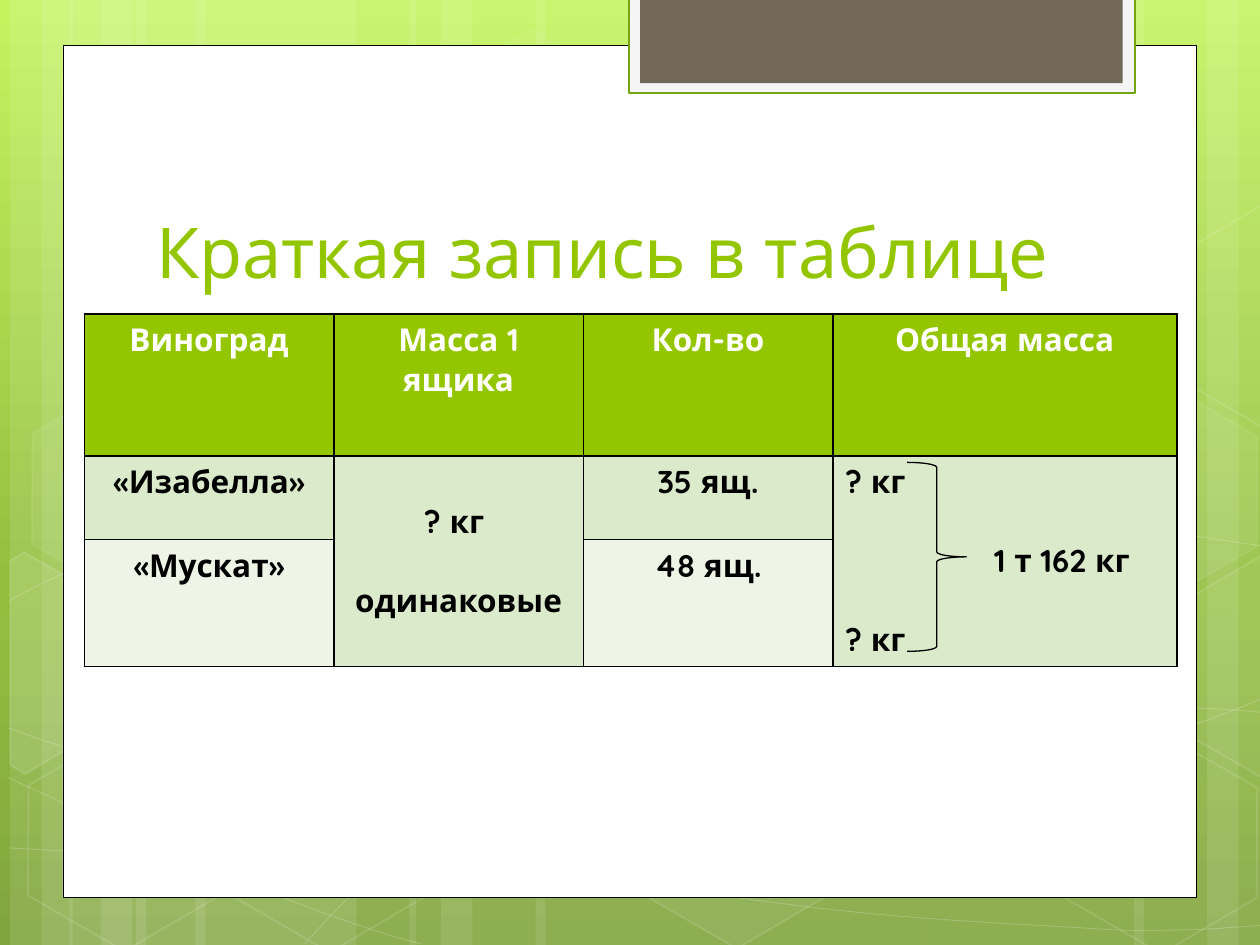
import copy
import math

import pptx
import pptx.dml.color
import pptx.enum.shapes
import pptx.enum.text
import pptx.oxml
import pptx.oxml.ns
import pptx.util

Inches, Pt = pptx.util.Inches, pptx.util.Pt
SHAPE = pptx.enum.shapes.MSO_SHAPE
ALIGN = pptx.enum.text.PP_ALIGN
qn = pptx.oxml.ns.qn

WIDTH, HEIGHT = 10, 7.5
FONT = "Quicksand"
LINE_PITCH = 22.5  # points between two lines of 18 pt text
TILT = 30  # degrees, all hexagons
COLORS = {"white": "FFFFFF", "black": "000000", "green": "94C600", "odd": "DCEACC", "even": "EEF5E7",
          "tab": "F5F5F5", "tab edge": "74A510", "tab core": "71685A"}

# Content
TITLE = "Краткая запись в таблице"
HEADINGS = ["Виноград", "Масса 1 ящика", "Кол-во", "Общая масса"]
GRAPES = [("«Изабелла»", "35 ящ."), ("«Мускат»", "48 ящ.")]
# Merged cells: text, empty lines above, left indent in inches
BOX_MASS = [("? кг ", 1, 0), ("одинаковые", 1, 0)]
TOTAL_MASS = [("? кг", 0, 0), ("1 т 162 кг", 1, 1.18), ("? кг", 1, 0)]

# Backdrop: gradient stops, bars (left, width, turn), curves (start, then cubic or straight segments)
BACKDROP = [(0, "C3F35F"), (0.62, "93BF3F"), (1, "81A53E")]
BARS = [(1.08, 1.75, 0), (0.08, 0.5, 0), (0.33, 0.83, 0), (1.55, 1.75, 0), (0.55, 0.5, 0), (0.8, 0.83, 0),
        (7.33, 1.75, 180), (9.58, 0.5, 180), (9, 0.83, 180), (4.25, 3.08, 0), (3.25, 0.5, 0), (3.5, 0.83, 0)]
CURVES = [
    ((0.07, 6.73), [(0.61, 6.76, 1.15, 6.79, 1.9, 6.78), (2.65, 6.77, 3.58, 6.75, 4.58, 6.65),
                    (5.58, 6.55, 7, 6.36, 7.92, 6.17), (8.83, 5.98, 9.77, 5.68, 10.07, 5.51)]),
    ((0.07, 4.77), [(0.36, 4.61, 0.65, 4.46, 1.21, 4.31), (1.78, 4.16, 2.59, 3.94, 3.47, 3.87),
                    (4.36, 3.8, 5.44, 3.79, 6.54, 3.87), (7.64, 3.95, 9.47, 4.26, 10.07, 4.34)]),
    ((0.06, 6.17), [(1.27, 6.72, 2.47, 7.27, 3.34, 7.49)]),
    ((0.07, 5.78), [(0.38, 5.89, 0.7, 6, 1.28, 6.16), (1.86, 6.31, 2.73, 6.56, 3.57, 6.73),
                    (4.4, 6.9, 5.45, 7.08, 6.28, 7.18), (7.11, 7.29, 8, 7.33, 8.53, 7.36),
                    (9.05, 7.4, 9.19, 7.38, 9.45, 7.38), (9.71, 7.37, 9.89, 7.35, 10.07, 7.34)]),
    ((2.42, 7.49), [(2.6, 7.29, 2.78, 7.09, 3.02, 6.91), (3.26, 6.73, 3.6, 6.53, 3.88, 6.39),
                    (4.16, 6.25, 4.33, 6.19, 4.7, 6.09), (5.06, 5.99, 5.73, 5.85, 6.08, 5.78),
                    (6.44, 5.71, 6.49, 5.71, 6.8, 5.69), (7.11, 5.66, 7.6, 5.63, 7.94, 5.62),
                    (8.29, 5.61, 8.86, 5.62, 8.86, 5.62), (9.53, 5.62),
                    (9.71, 5.63, 9.88, 5.64, 9.97, 5.65), (10.06, 5.66, 10.03, 5.65, 10.06, 5.66)]),
]
# Hexagons: (left, top) or (centre, corners), then fill and edge opacity
LEFT_CUT = ((0.36, 5.35), [(0.08, 4.45), (0.19, 4.38), (0.96, 4.82), (0.95, 5.7), (0.2, 6.14), (0.08, 6.07)])
LOWER_CUT = ((9.85, 5.2), [(9.26, 4.85), (10.01, 4.41), (10.09, 4.46), (10.09, 6.13), (10.02, 6.17), (9.26, 5.73)])
UPPER_CUT = ((9.85, 2.41), [(9.26, 2.07), (10.01, 1.63), (10.1, 1.68), (10.09, 3.35), (10.02, 3.39), (9.26, 2.95)])
HEXAGONS = [((3.34, 0.36), 4, 8), ((4.97, 5.89), 6, 12), (LEFT_CUT, 10, 12), ((0.11, 5.91), 0, 12),
            ((0.14, 3.12), 7, 8), ((1.74, 5.92), 0, 12), ((7.53, 4.53), 10, 12), ((8.34, 5.93), 0, 12),
            ((8.34, 3.14), 7, 8), (LOWER_CUT, 4, 12), (UPPER_CUT, 0, 12)]

deck = pptx.Presentation()
deck.slide_width, deck.slide_height = Inches(WIDTH), Inches(HEIGHT)
slide = deck.slides.add_slide(deck.slide_layouts[6])


def rgb(name):
    return pptx.dml.color.RGBColor.from_string(COLORS.get(name, name))


def paint(fill, color, opacity=100):
    if not color or not opacity:
        fill.background()
        return
    fill.solid()
    fill.fore_color.rgb = rgb(color)


def style(shape, fill=None, edge=None, width=1, fill_opacity=100, edge_opacity=100):
    shape.shadow.inherit = False
    paint(shape.fill, fill, fill_opacity)
    paint(shape.line.fill, edge)
    if edge:
        shape.line.width = Pt(width)
    for route, opacity in (("a:solidFill", fill_opacity), ("a:ln/a:solidFill", edge_opacity)):
        for color in shape.element.spPr.xpath(route + "/a:srgbClr"):
            if opacity < 100:
                color.append(pptx.oxml.parse_xml(
                    f'<a:alpha {pptx.oxml.ns.nsdecls("a")} val="{opacity * 1000}"/>'))


def preset(kind, left, top, width, height):
    return slide.shapes.add_shape(kind, Inches(left), Inches(top), Inches(width), Inches(height))


def outline(points, close):
    corners = [(Inches(x), Inches(y)) for x, y in points]
    builder = slide.shapes.build_freeform(*corners[0])
    builder.add_line_segments(corners[1:], close=close)
    return builder.convert_to_shape()


def curve(start, segments):
    points = [start] + [pair for s in segments for pair in zip(s[::2], s[1::2])]
    shape = outline(points, False)
    steps = iter(shape.element.spPr.xpath(".//a:lnTo"))
    for segment in segments:
        first = next(steps)
        if len(segment) == 6:  # turn three straight steps into one cubic
            first.tag = qn("a:cubicBezTo")
            for _ in range(2):
                step = next(steps)
                first.append(step[0])
                step.getparent().remove(step)
    return shape


def cut_hexagon(centre, corners):
    cos, sin = math.cos(math.radians(TILT)), math.sin(math.radians(TILT))
    cx, cy = centre
    return outline([(cx + (x - cx) * cos + (y - cy) * sin, cy - (x - cx) * sin + (y - cy) * cos)
                    for x, y in corners], True)


def write(paragraph, text, size, color, bold=False, align=ALIGN.LEFT):
    paragraph.text = text
    paragraph.alignment = align
    font = paragraph.runs[0].font
    font.name, font.size, font.bold = FONT, Pt(size), bold
    font.color.rgb = rgb(color)


# Background
backdrop = slide.background.fill
backdrop.gradient()
backdrop.gradient_angle = 270
stop_list = slide.element.find(".//" + qn("a:gsLst"))
stop_list.insert(1, copy.deepcopy(stop_list[0]))
for stop, (position, color) in zip(backdrop.gradient_stops, BACKDROP):
    stop.position = position
    stop.color.rgb = rgb(color)

for left, width, turn in BARS:
    bar = preset(SHAPE.RECTANGLE, left, 0, width, HEIGHT)
    bar.rotation = turn
    style(bar, "white", fill_opacity=10)
for start, segments in CURVES:
    style(curve(start, segments), None, "white", 0.5, edge_opacity=20)
for place, inside, edge in HEXAGONS:
    if isinstance(place[0], tuple):
        hexagon = cut_hexagon(*place)
    else:
        hexagon = preset(SHAPE.HEXAGON, *place, 1.75, 1.52)
        hexagon.adjustments[0] = 0.285
    hexagon.rotation = TILT
    style(hexagon, "white", "white", 1, inside, edge)

# White page and the tab at its top
style(preset(SHAPE.RECTANGLE, 0.5, 0.36, 9, 6.76), "white", "black", 0.5)
style(preset(SHAPE.RECTANGLE, 4.99, -0.02, 4.02, 0.76), "tab", "tab edge", 1.25)
style(preset(SHAPE.RECTANGLE, 5.08, -0.02, 3.83, 0.68), "tab core")

# Title
heading = slide.shapes.add_textbox(Inches(1.14), Inches(1.12), Inches(7.68), Inches(1.25)).text_frame
heading.word_wrap = True
heading.vertical_anchor = pptx.enum.text.MSO_ANCHOR.BOTTOM
write(heading.paragraphs[0], TITLE, 40, "green")

# Table
columns, rows = [1.98, 1.98, 1.98, 2.73], [1.13, 0.66, 1.01]
grid = slide.shapes.add_table(len(rows), len(columns), Inches(0.67), Inches(2.49),
                              Inches(sum(columns)), Inches(sum(rows))).table
for column, width in zip(grid.columns, columns):
    column.width = Inches(width)
for row, height in zip(grid.rows, rows):
    row.height = Inches(height)
for r, band in enumerate(["green", "odd", "even"]):
    for c in range(len(columns)):
        cell = grid.cell(r, c)
        for side in "LRTB":
            cell._tc.get_or_add_tcPr().append(pptx.oxml.parse_xml(
                f'<a:ln{side} {pptx.oxml.ns.nsdecls("a")} w="12700"><a:solidFill>'
                f'<a:srgbClr val="{COLORS["black"]}"/></a:solidFill></a:ln{side}>'))
        paint(cell.fill, band)

for c, label in enumerate(HEADINGS):
    write(grid.cell(0, c).text_frame.paragraphs[0], label, 18, "white", True, ALIGN.CENTER)
for r, (grape, boxes) in enumerate(GRAPES, 1):
    for c, value in ((0, grape), (2, boxes)):
        write(grid.cell(r, c).text_frame.paragraphs[0], value, 18, "black", True, ALIGN.CENTER)
for c, lines, align in ((1, BOX_MASS, ALIGN.CENTER), (3, TOTAL_MASS, ALIGN.LEFT)):
    cell = grid.cell(1, c)
    cell.merge(grid.cell(2, c))
    cell.margin_top = Inches(0.05) + Pt(lines[0][1] * LINE_PITCH)
    for i, (text, gap, indent) in enumerate(lines):
        paragraph = cell.text_frame.add_paragraph() if i else cell.text_frame.paragraphs[0]
        write(paragraph, text, 18, "black", True, align)
        paragraph.space_before = Pt(gap * LINE_PITCH if i else 0)
        if indent:
            paragraph._p.get_or_add_pPr().set("marL", str(Inches(indent)))

# Brace joining the two masses
style(preset(SHAPE.RIGHT_BRACE, 7.2, 3.67, 0.47, 1.5), None, "black", 0.75)

deck.save("out.pptx")
